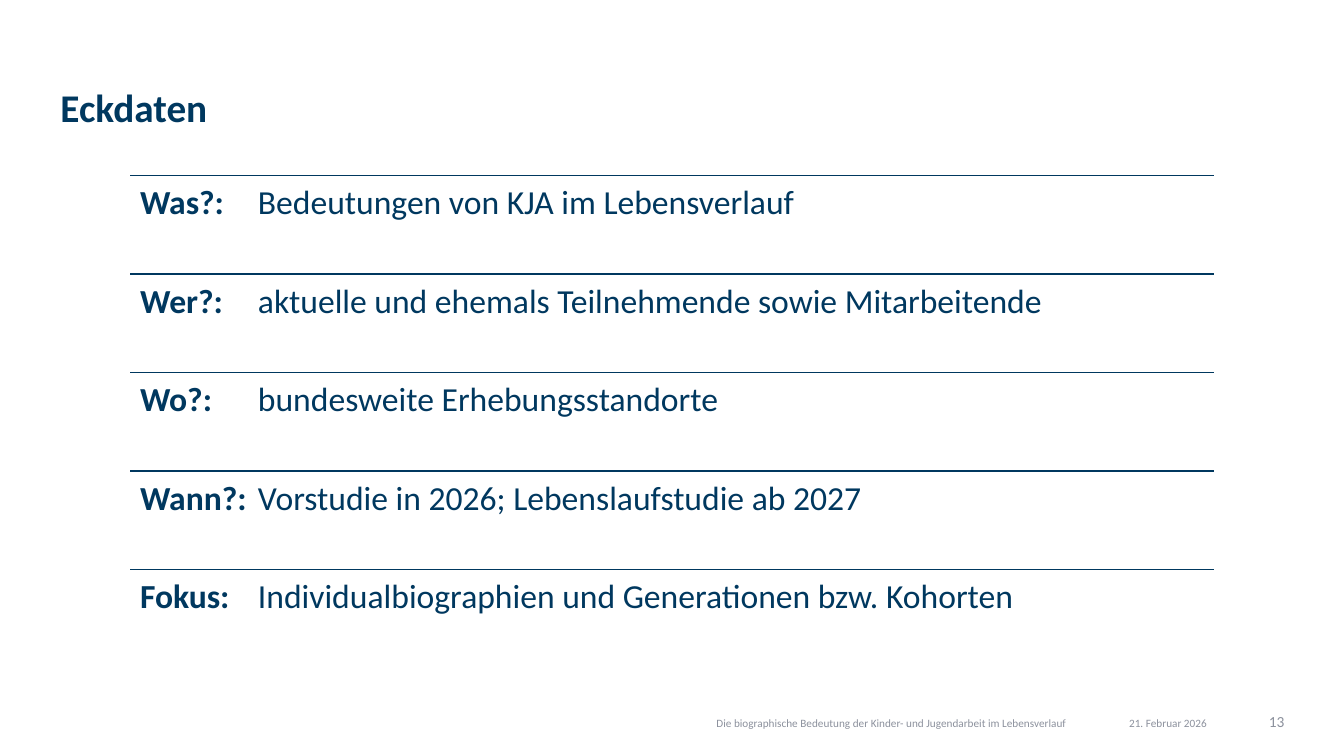
from lxml import etree
from pptx import Presentation
from pptx.dml.color import RGBColor
from pptx.enum import shapes, text
from pptx.oxml import ns
from pptx.util import Inches, Pt

NAVY = "00385F"
GREY = "8C919D"
LEFT, TOP, WIDTH, PITCH = 1.29, 1.74, 10.75, 0.978
TAB = 1.17
FACTS = [
    ("Was?:", "Bedeutungen von KJA im Lebensverlauf"),
    ("Wer?:", "aktuelle und ehemals Teilnehmende sowie Mitarbeitende"),
    ("Wo?:", "bundesweite Erhebungsstandorte"),
    ("Wann?:", "Vorstudie in 2026; Lebenslaufstudie ab 2027"),
    ("Fokus:", "Individualbiographien und Generationen bzw. Kohorten"),
]


def rgb(value):
    return RGBColor.from_string(value)


def add_run(p, content, size, color, bold=False):
    r = p.add_run()
    r.text = content
    r.font.name = "Calibri"
    r.font.size = Pt(size)
    r.font.bold = bold
    r.font.color.rgb = rgb(color)


def add_text(s, content, box, size=24, color=NAVY, bold=False, align="LEFT",
             insets=(0, 0, 0, 0), spacing=None):
    sp = s.shapes.add_textbox(*map(Inches, box))
    tf = sp.text_frame
    tf.word_wrap = True
    tf.vertical_anchor = text.MSO_ANCHOR.TOP
    tf.margin_left, tf.margin_top, tf.margin_right, tf.margin_bottom = map(Inches, insets)
    p = tf.paragraphs[0]
    p.alignment = text.PP_ALIGN[align]
    p.line_spacing = spacing
    add_run(p, content, size, color, bold)
    return p


def add_tab(p, position):
    tabs = etree.SubElement(p._p.get_or_add_pPr(), ns.qn("a:tabLst"))
    etree.SubElement(tabs, ns.qn("a:tab"), pos=str(Inches(position)), algn="l")


def add_rule(s, y):
    line = s.shapes.add_connector(shapes.MSO_CONNECTOR.STRAIGHT, Inches(LEFT), Inches(y),
                                  Inches(LEFT + WIDTH), Inches(y))
    line.line.color.rgb = rgb(NAVY)
    line.line.width = Pt(1)
    etree.SubElement(line._element.spPr, ns.qn("a:effectLst"))


def add_fact(s, y, label, detail):
    add_rule(s, y)
    p = add_text(s, label, (LEFT, y, WIDTH, PITCH), bold=True,
                 insets=(0.1, 0.1, 0.1, 0.1), spacing=0.9)
    add_tab(p, TAB)
    add_run(p, "\t" + detail, 24, NAVY)


def main():
    prs = Presentation()
    prs.slide_width, prs.slide_height = Inches(13.33), Inches(7.5)
    s = prs.slides.add_slide(prs.slide_layouts[6])
    add_text(s, "Eckdaten", (0.6, 0.88, 12.13, 0.94), size=28, bold=True, spacing=0.9)
    for i, (label, detail) in enumerate(FACTS):
        add_fact(s, TOP + i * PITCH, label, detail)
    add_text(s, "Die biographische Bedeutung der Kinder- und Jugendarbeit im Lebensverlauf",
             (5.88, 7.06, 4.72, 0.16), size=8, color=GREY, align="RIGHT",
             insets=(0, 0.05, 0.02, 0))
    add_text(s, "21. Februar 2026", (10.76, 7.06, 1.65, 0.16), size=8, color=GREY,
             align="CENTER", insets=(0, 0.05, 0, 0))
    add_text(s, "13", (12.42, 7.06, 0.32, 0.16), size=11, color=GREY, align="RIGHT",
             insets=(0, 0.01, 0, 0))
    prs.save("out.pptx")


if __name__ == "__main__":
    main()
